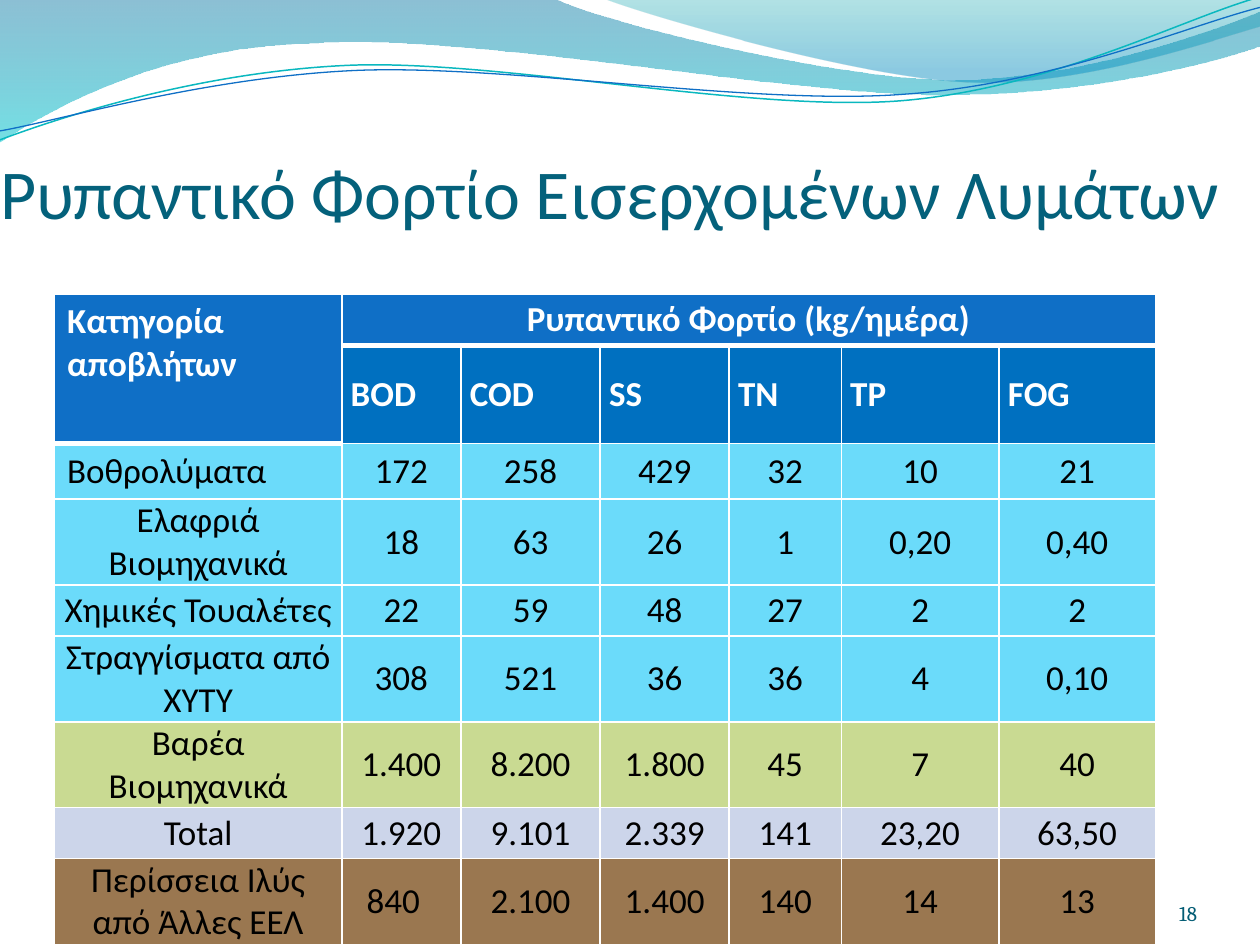
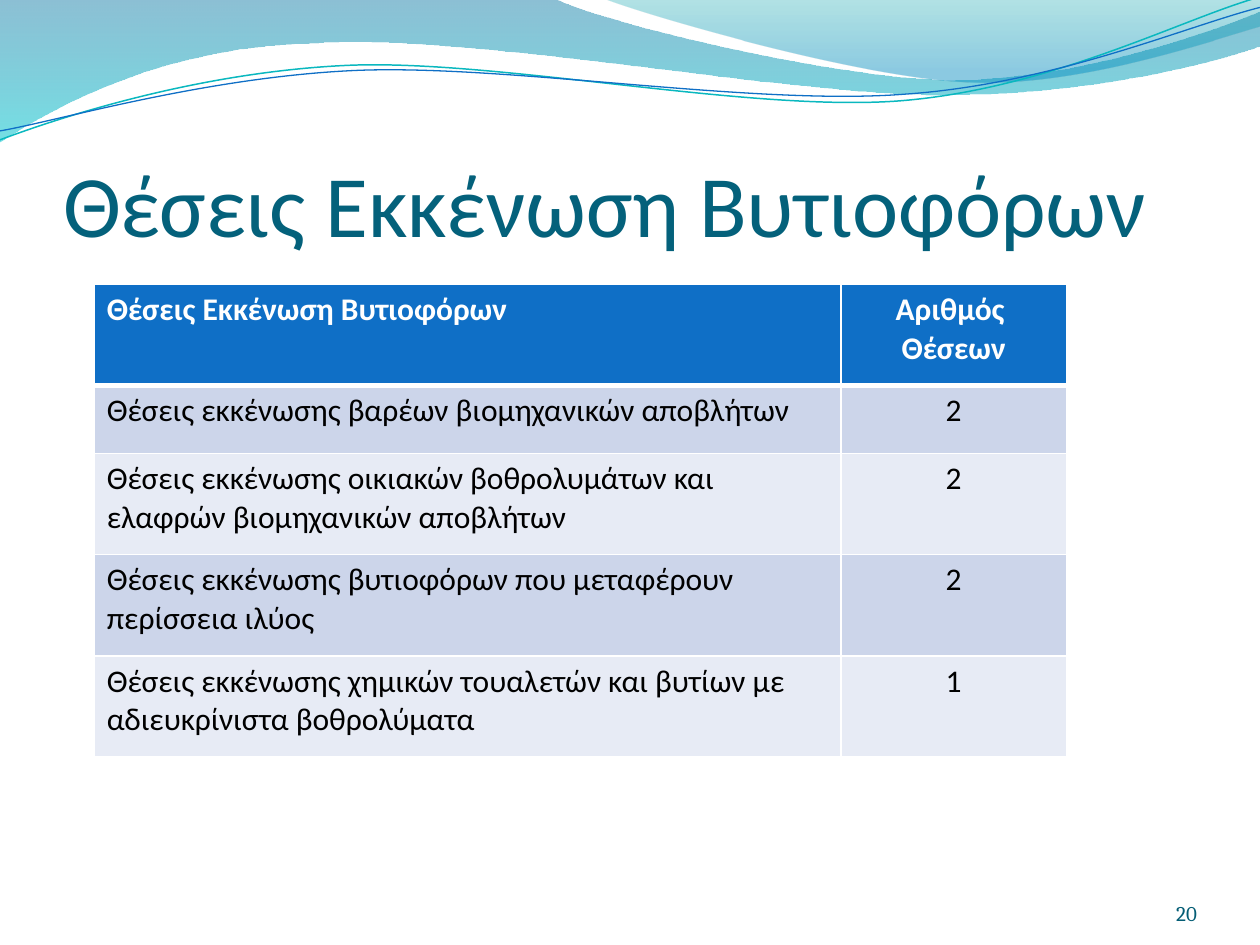
from dataclasses import dataclass, replace

from lxml.etree import SubElement
from pptx import Presentation
from pptx.dml.color import RGBColor
from pptx.enum.text import MSO_ANCHOR, MSO_AUTO_SIZE, PP_ALIGN
from pptx.oxml.ns import qn
from pptx.util import Cm, Pt

WHITE, BLACK = "FFFFFF", "000000"
TITLE, NUMBER = "04617B", "045D75"
HEADER, SUBHEADER = "0F6FC6", "0070C0"
TEAL = "0AB8BF"
CYAN, GREEN, BROWN = "6BDBFA", "C9DA92", "9A7750"
BAND_DARK, BAND_LIGHT = "CCD5EA", "E7EBF5"
BODY_FONT, NUMBER_FONT = "Calibri", "Cambria"
THIN, THICK = 1, 3


@dataclass(frozen=True)
class Stop:
    position: float
    color: str
    opacity: int


@dataclass(frozen=True)
class Wave:
    start: tuple
    segments: tuple
    stops: tuple = ()
    line: str = ""
    width: float = 0
    rotation: float = 0


@dataclass(frozen=True)
class TextStyle:
    size: float
    color: str
    font: str = BODY_FONT
    bold: bool = False
    align: PP_ALIGN = PP_ALIGN.LEFT


@dataclass(frozen=True)
class Cell:
    text: str
    fill: str
    style: TextStyle
    compact: bool = False
    right: float = 0.18


@dataclass(frozen=True)
class Grid:
    left: float
    top: float
    widths: tuple
    heights: tuple
    rows: list
    headings: set
    merges: tuple = ()


@dataclass(frozen=True)
class Heading:
    text: str
    size: float
    box: tuple


WAVES = (
    Wave(
        (0, 0),
        (
            ((11.18, -0.03),),
            ((12.09, 0.43), (16.87, 1.6), (19.25, 1.6)),
            ((21.67, 1.6), (24.33, 0.66), (25.4, 0.23)),
            ((25.43, 0.91),),
            ((24.97, 1.12), (22.1, 1.93), (18.95, 1.91)),
            ((15.8, 1.91), (9.7, 0.71), (6.53, 0.86)),
            ((3.28, 0.91), (1.17, 2.11), (-0.03, 2.87)),
            ((0, 0),),
        ),
        stops=(Stop(0, "0074A1", 45), Stop(1, "00C6CF", 55)),
    ),
    Wave(
        (12.17, -0.03),
        (
            ((12.93, 0.28), (17.32, 1.57), (19.53, 1.65)),
            ((21.74, 1.75), (24.41, 0.81), (25.4, 0.53)),
            ((25.4, 0),),
            ((12.17, -0.03),),
        ),
        stops=(Stop(0, "00A1A9", 30), Stop(0.8, "008BBF", 45)),
    ),
    Wave(
        (-0.05, 2.22),
        (
            ((1.19, 1.82), (4.02, 1.04), (7.05, 1.05)),
            ((10.05, 1.07), (15.02, 2.37), (18.08, 2.29)),
            ((21.13, 2.2), (23.86, 0.91), (25.41, 0.55)),
        ),
        line=TEAL,
        width=0.85,
        rotation=357.3,
    ),
    Wave(
        (-0.04, 2.04),
        (
            ((1.16, 1.89), (4.17, 1.15), (7.2, 1.16)),
            ((10.25, 1.18), (15.13, 2.25), (18.19, 2.16)),
            ((21.22, 2.1), (23.93, 1.06), (25.45, 0.75)),
        ),
        line=HEADER,
        width=0.75,
        rotation=357.3,
    ),
)


def rgb(color: str) -> RGBColor:
    return RGBColor.from_string(color)


def bend(sp, wave: Wave) -> None:
    outline = next(sp.element.iter(qn("a:path")))
    lines = iter(outline.findall(qn("a:lnTo")))
    for segment in wave.segments:
        parts = [next(lines) for _ in segment]
        if len(parts) == 3:
            curve = SubElement(outline, qn("a:cubicBezTo"))
            parts[0].addprevious(curve)
            for part in parts:
                curve.append(part[0])
                outline.remove(part)


def draw_wave(shapes, wave: Wave):
    builder = shapes.build_freeform(Cm(wave.start[0]), Cm(wave.start[1]))
    points = [(Cm(x), Cm(y)) for segment in wave.segments for x, y in segment]
    builder.add_line_segments(points, close=bool(wave.stops))
    sp = builder.convert_to_shape()
    bend(sp, wave)
    sp.rotation = wave.rotation
    sp.shadow.inherit = False
    if wave.stops:
        sp.line.fill.background()
        sp.fill.gradient()
        sp.fill.gradient_angle = 270
        for target, stop in zip(sp.fill.gradient_stops, wave.stops):
            target.color.rgb = rgb(stop.color)
            target.position = stop.position
        for node, stop in zip(sp.element.iter(qn("a:srgbClr")), wave.stops):
            SubElement(node, qn("a:alpha")).set("val", str(stop.opacity * 1000))
    else:
        sp.fill.background()
        sp.line.color.rgb = rgb(wave.line)
        sp.line.width = Pt(wave.width)
    return sp


def move_waves_to_layout(slide) -> None:
    tree = slide.slide_layout.shapes.element
    for index, wave in enumerate(WAVES, start=2):
        tree.insert(index, draw_wave(slide.shapes, wave).element)


def set_margins(target, left: float, top: float, right: float, bottom: float) -> None:
    target.margin_left, target.margin_right = Cm(left), Cm(right)
    target.margin_top, target.margin_bottom = Cm(top), Cm(bottom)


def write(tf, text: str, style: TextStyle) -> None:
    for index, line in enumerate(text.split("\n")):
        p = tf.add_paragraph() if index else tf.paragraphs[0]
        p.alignment = style.align
        r = p.add_run()
        r.text = line
        r.font.name = style.font
        r.font.size = Pt(style.size)
        r.font.bold = style.bold
        r.font.color.rgb = rgb(style.color)


def draw_title(slide, heading: Heading) -> None:
    sp = slide.shapes.title
    sp.left, sp.top, sp.width, sp.height = (Cm(v) for v in heading.box)
    tf = sp.text_frame
    tf.auto_size = MSO_AUTO_SIZE.NONE
    tf.vertical_anchor = MSO_ANCHOR.BOTTOM
    set_margins(tf, 0, 0.13, 0, 0)
    write(tf, heading.text, TextStyle(heading.size, TITLE))


def draw_number(slide, number: int) -> None:
    tf = slide.shapes.add_textbox(Cm(22.02), Cm(17.65), Cm(2.11), Cm(1.02)).text_frame
    tf.word_wrap = True
    tf.vertical_anchor = MSO_ANCHOR.BOTTOM
    set_margins(tf, 0, 0, 0, 0)
    write(tf, str(number), TextStyle(12, NUMBER, NUMBER_FONT, align=PP_ALIGN.RIGHT))


def set_borders(cell, top: float, bottom: float) -> None:
    tc_pr = cell._tc.get_or_add_tcPr()
    edges = (("a:lnL", THIN), ("a:lnR", THIN), ("a:lnT", top), ("a:lnB", bottom))
    for index, (tag, width) in enumerate(edges):
        ln = SubElement(tc_pr, qn(tag), w=str(Pt(width)))
        SubElement(SubElement(ln, qn("a:solidFill")), qn("a:srgbClr"), val=WHITE)
        tc_pr.insert(index, ln)


def draw_table(slide, grid: Grid) -> None:
    table = slide.shapes.add_table(
        len(grid.heights), len(grid.widths), Cm(grid.left), Cm(grid.top),
        Cm(sum(grid.widths)), Cm(sum(grid.heights)),
    ).table
    table.horz_banding = False
    for column, width in zip(table.columns, grid.widths):
        column.width = Cm(width)
    for row, height in zip(table.rows, grid.heights):
        row.height = Cm(height)
    for first, last in grid.merges:
        table.cell(*first).merge(table.cell(*last))
    for r, row in enumerate(grid.rows):
        for c, item in enumerate(row):
            cell = table.cell(r, c)
            set_borders(
                cell,
                THICK if (r - 1, c) in grid.headings else THIN,
                THICK if (r, c) in grid.headings else THIN,
            )
            cell.fill.solid()
            cell.fill.fore_color.rgb = rgb(item.fill)
            if item.compact:
                cell.vertical_anchor = MSO_ANCHOR.MIDDLE
                set_margins(cell, 0.18, 0, item.right, 0)
            if item.text:
                write(cell.text_frame, item.text, item.style)


def pollution_grid() -> Grid:
    head = TextStyle(20, WHITE, bold=True)
    head_center = replace(head, align=PP_ALIGN.CENTER)
    body = TextStyle(20, BLACK, align=PP_ALIGN.CENTER)
    loads = (
        (CYAN, "Ελαφριά Βιομηχανικά", "18 63 26 1 0,20 0,40"),
        (CYAN, "Χημικές Τουαλέτες ", "22 59 48 27 2 2"),
        (CYAN, "Στραγγίσματα από ΧΥΤΥ", "308 521 36 36 4 0,10"),
        (GREEN, "Βαρέα Βιομηχανικά", "1.400 8.200 1.800 45 7 40"),
        (BAND_DARK, "Total", "1.920 9.101 2.339 141 23,20 63,50"),
        (BROWN, "Περίσσεια Ιλύς από Άλλες ΕΕΛ", "840 2.100 1.400 140 14 13"),
    )
    top = [Cell("Κατηγορία αποβλήτων", HEADER, head)]
    top.append(Cell("Ρυπαντικό Φορτίο (kg/ημέρα)", HEADER, head_center, True))
    top += [Cell("", HEADER, head)] * 5
    units = [Cell("", HEADER, head)]
    units += [Cell(t, SUBHEADER, head, True) for t in "BOD COD SS TN TP FOG".split()]
    septage = [Cell("Βοθρολύματα", CYAN, TextStyle(20, BLACK))]
    septage += [Cell(t, CYAN, body, True) for t in "172 258 429 32 10 21".split()]
    rows = [top, units, septage]
    for fill, name, values in loads:
        rows.append([Cell(t, fill, body, True) for t in (name, *values.split())])
    rows[-1][1] = replace(rows[-1][1], right=0.5)
    return Grid(
        1.1, 5.93, (5.79, 2.4, 2.81, 2.6, 2.26, 3.18, 3.15),
        (1.03,) * 5 + (1.45,) + (1.03,) * 3, rows,
        {(0, c) for c in range(7)} | {(1, 0)},
        (((0, 0), (1, 0)), ((0, 1), (0, 6))),
    )


def places_grid() -> Grid:
    head = TextStyle(18, WHITE, bold=True)
    head_center = replace(head, align=PP_ALIGN.CENTER)
    body = TextStyle(18, BLACK)
    body_center = replace(body, align=PP_ALIGN.CENTER)
    places = (
        ("Θέσεις εκκένωσης βαρέων βιομηχανικών αποβλήτων", "2"),
        ("Θέσεις εκκένωσης οικιακών βοθρολυμάτων και ελαφρών βιομηχανικών αποβλήτων", "2"),
        ("Θέσεις εκκένωσης βυτιοφόρων που μεταφέρουν περίσσεια ιλύος", "2"),
        ("Θέσεις εκκένωσης χημικών τουαλετών και βυτίων με αδιευκρίνιστα βοθρολύματα", "1"),
    )
    rows = [[
        Cell("Θέσεις Εκκένωση Βυτιοφόρων", HEADER, head),
        Cell("Αριθμός \nΘέσεων", HEADER, head_center),
    ]]
    for index, (place, count) in enumerate(places):
        fill = BAND_LIGHT if index % 2 else BAND_DARK
        rows.append([Cell(place, fill, body), Cell(count, fill, body_center)])
    return Grid(
        1.9, 5.73, (15.05, 4.55), (2.04, 1.37, 2.04, 2.04, 2.04), rows, {(0, 0), (0, 1)}
    )


def main() -> None:
    prs = Presentation()
    prs.slide_width, prs.slide_height = Cm(25.4), Cm(19.05)
    pages = (
        (18, Heading("Ρυπαντικό Φορτίο Εισερχομένων Λυμάτων", 40, (0, 1.52, 25.4, 3.18)), pollution_grid()),
        (20, Heading("Θέσεις Εκκένωση Βυτιοφόρων", 50, (1.27, 1.96, 22.86, 3.18)), places_grid()),
    )
    for number, heading, grid in pages:
        slide = prs.slides.add_slide(prs.slide_layouts[5])
        draw_title(slide, heading)
        draw_table(slide, grid)
        draw_number(slide, number)
    move_waves_to_layout(prs.slides[0])
    prs.save("out.pptx")


if __name__ == "__main__":
    main()
